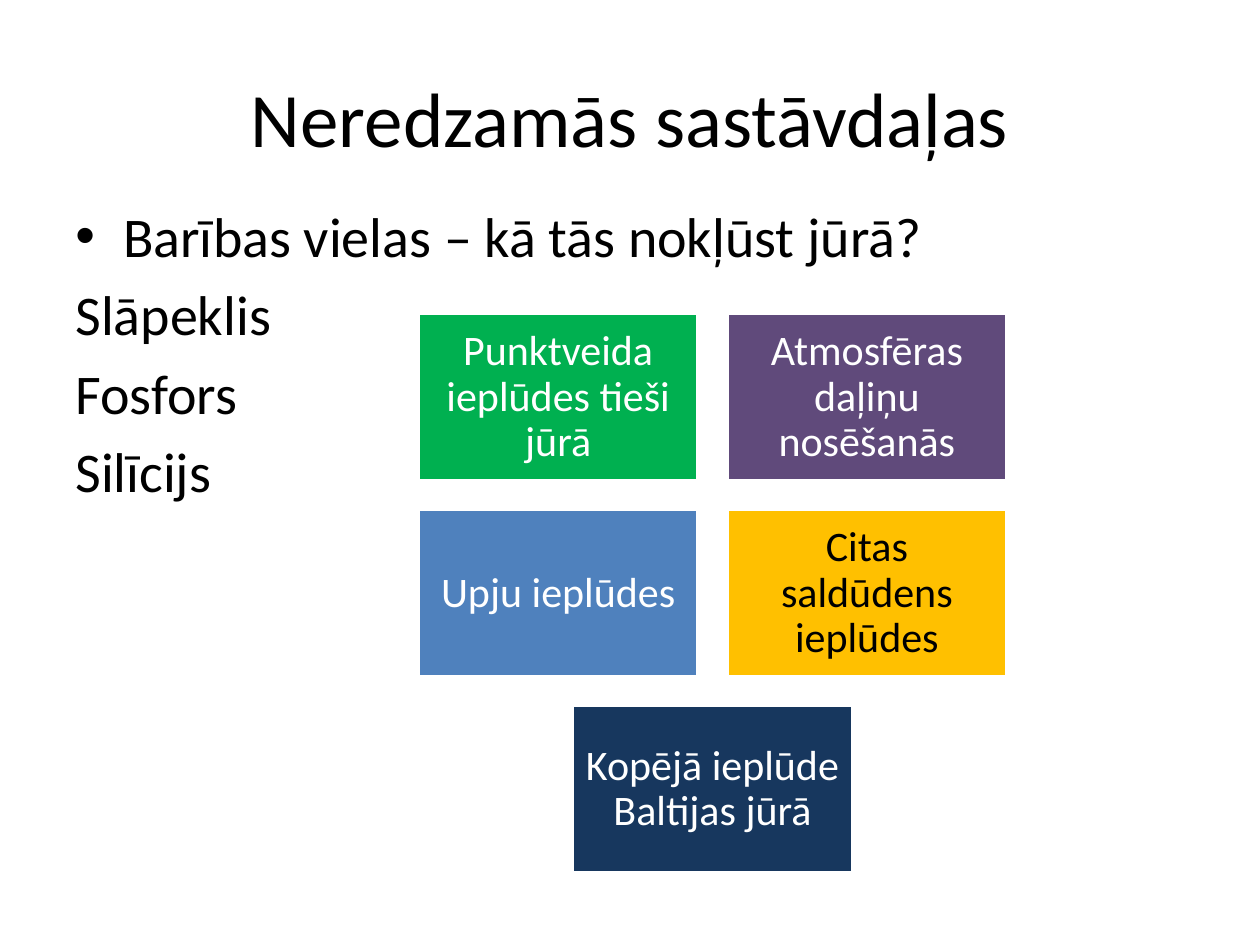
from lxml.etree import SubElement
from pptx import Presentation
from pptx.dml.color import RGBColor
from pptx.enum.shapes import MSO_SHAPE as Shape
from pptx.enum.text import MSO_ANCHOR as Anchor, PP_ALIGN as Align
from pptx.oxml.ns import qn
from pptx.util import Inches, Pt


def color(value):
    return RGBColor.from_string(value)


def write(para, text, size=24, fill="000000", align=Align.LEFT, before=0, spacing=1.0, bullet=None, hanging=0):
    para.alignment = align
    para.space_before = Pt(before)
    para.line_spacing = spacing
    if hanging:
        properties = para._p.get_or_add_pPr()
        properties.set("marL", str(Inches(hanging)))
        properties.set("indent", str(Inches(-hanging)))
        if bullet:
            SubElement(properties, qn("a:buFont"), typeface="Arial")
            SubElement(properties, qn("a:buChar"), char=bullet)
        else:
            SubElement(properties, qn("a:buNone"))
    span = para.add_run()
    span.text = text
    span.font.name = "Calibri"
    span.font.size = Pt(size)
    span.font.color.rgb = color(fill)


deck = Presentation()
deck.slide_width, deck.slide_height = Inches(10), Inches(7.5)
page = deck.slides.add_slide(deck.slide_layouts[6])

title = page.shapes.add_textbox(Inches(0.5), Inches(0.3), Inches(9), Inches(1.25)).text_frame
title.word_wrap = True
title.vertical_anchor = Anchor.MIDDLE
write(title.paragraphs[0], "Neredzamās sastāvdaļas", size=44, align=Align.CENTER)

body = page.shapes.add_textbox(Inches(0.5), Inches(1.55), Inches(9), Inches(5.15)).text_frame
body.word_wrap = True
write(body.paragraphs[0], "Barības vielas – kā tās nokļūst jūrā?", size=32, bullet="•", hanging=0.38)
for nutrient in ["Slāpeklis", "Fosfors", "Silīcijs"]:
    write(body.add_paragraph(), nutrient, size=32, before=6.4, hanging=0.38)

left, top = 3.32, 2.49
width, height = 2.22, 1.33
column_step, row_step = 2.45, 1.555
inflows = [
    (0, 0, "Punktveida ieplūdes tieši jūrā", "00B050", "FFFFFF"),
    (1, 0, "Atmosfēras daļiņu nosēšanās", "604A7B", "FFFFFF"),
    (0, 1, "Upju ieplūdes", "4F81BD", "FFFFFF"),
    (1, 1, "Citas saldūdens ieplūdes", "FFC000", "000000"),
    (0.5, 2, "Kopējā ieplūde Baltijas jūrā", "17375E", "FFFFFF"),
]
for column, row, label, fill, ink in inflows:
    box = page.shapes.add_shape(
        Shape.RECTANGLE,
        Inches(left + column * column_step),
        Inches(top + row * row_step),
        Inches(width),
        Inches(height),
    )
    box.shadow.inherit = False
    box.fill.solid()
    box.fill.fore_color.rgb = color(fill)
    box.line.color.rgb = color("FFFFFF")
    box.line.width = Pt(2)
    frame = box.text_frame
    frame.word_wrap = True
    frame.vertical_anchor = Anchor.MIDDLE
    frame.margin_left = frame.margin_right = Inches(0.1)
    frame.margin_top = frame.margin_bottom = Inches(0.1)
    write(frame.paragraphs[0], label, fill=ink, align=Align.CENTER, spacing=0.9)

deck.save("out.pptx")
